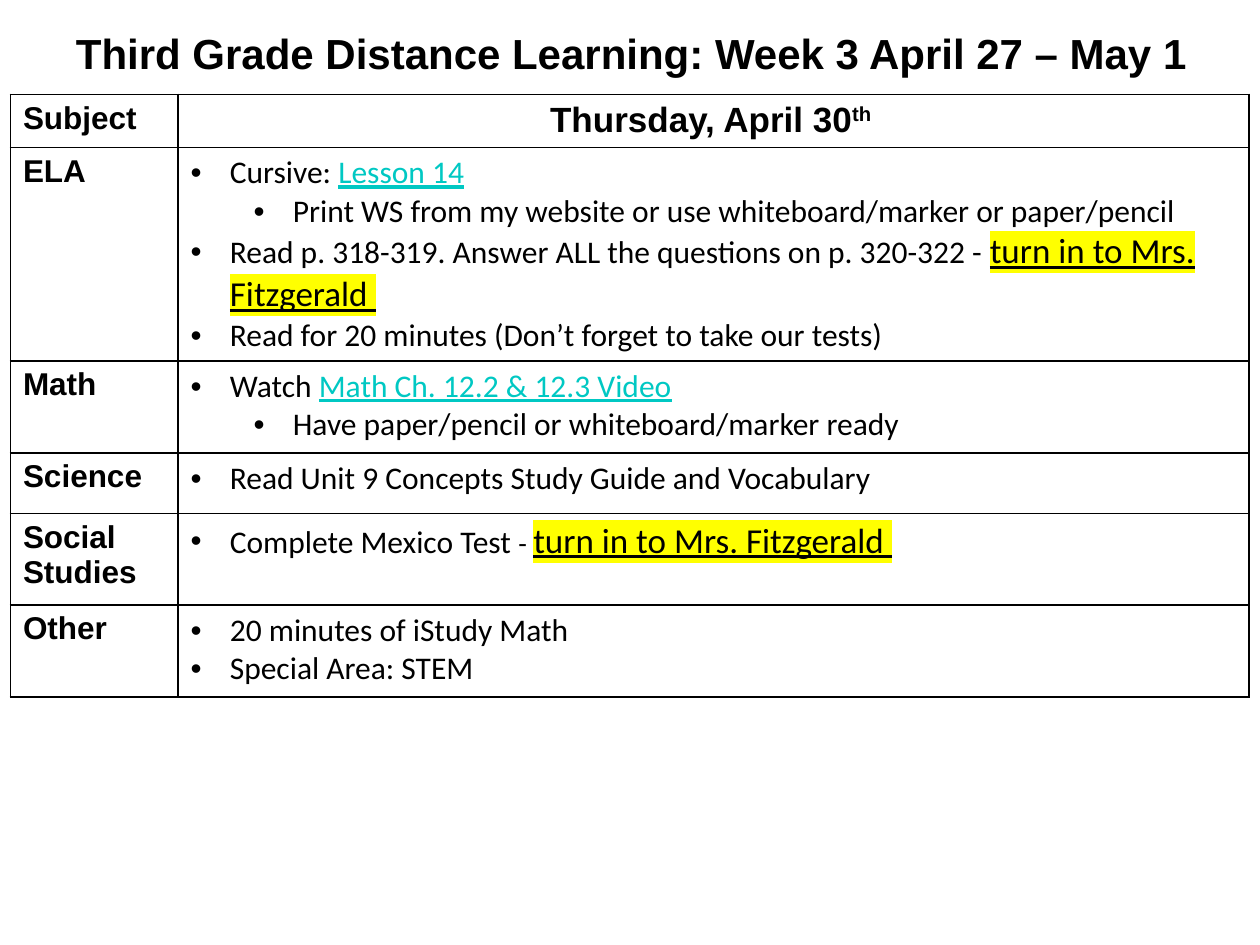
from dataclasses import dataclass

from lxml import etree
from pptx import Presentation
from pptx.dml.color import RGBColor
from pptx.enum import text
from pptx.oxml.ns import qn
from pptx.util import Cm, Pt


@dataclass(frozen=True)
class Theme:
    ink: str = "000000"
    paper: str = "FFFFFF"
    link: str = "00C8C3"
    mark: str = "FFFF00"
    head: str = "Arial"
    body: str = "Calibri"
    title: int = 24
    large: int = 20
    base: int = 18
    small: int = 16
    rule: int = 1


@dataclass(frozen=True)
class Span:
    words: str
    size: int = Theme.base
    font: str = Theme.body
    color: str = Theme.ink
    bold: bool = False
    line: bool = False
    mark: str = ""
    rise: int = 0


@dataclass(frozen=True)
class Item:
    spans: tuple[Span, ...]
    level: int = 0


@dataclass(frozen=True)
class Row:
    subject: str
    height: float
    items: tuple[Item, ...]


def label(words: str, size: int = Theme.base, rise: int = 0) -> Span:
    return Span(words, size, Theme.head, bold=True, rise=rise)


def link(words: str) -> Span:
    return Span(words, color=Theme.link, line=True)


def item(*spans: Span | str, level: int = 0) -> Item:
    return Item(tuple(Span(s) if isinstance(s, str) else s for s in spans), level)


TURN = Span("turn in to Mrs. Fitzgerald ", Theme.large, line=True, mark=Theme.mark)
WIDTHS = (3.38, 21.59)
HEAD = 1.07
ROWS = (
    Row("ELA", 2.97, (
        item("Cursive: ", link("Lesson 14")),
        item("Print WS from my website or use whiteboard/marker or paper/pencil", level=1),
        item("Read p. 318-319. Answer ALL the questions on p. 320-322 - ", TURN),
        item("Read for 20 minutes (Don’t forget to take our tests)"),
    )),
    Row("Math", 1.85, (
        item("Watch ", link("Math Ch. 12.2 & 12.3 Video")),
        item("Have paper/pencil or whiteboard/marker ready", level=1),
    )),
    Row("Science", 1.22, (item("Read Unit 9 Concepts Study Guide and Vocabulary"),)),
    Row("Social Studies", 1.85, (
        item("Complete Mexico Test ", Span("- ", Theme.small), TURN),
    )),
    Row("Other", 1.85, (
        item("20 minutes of iStudy Math"),
        item("Special Area: STEM"),
    )),
)


def write(para, spans: tuple[Span, ...], center: bool = False) -> None:
    if center:
        para.alignment = text.PP_ALIGN.CENTER
    for span in spans:
        run = para.add_run()
        run.text = span.words
        font = run.font
        font.name, font.size = span.font, Pt(span.size)
        font.bold, font.underline = span.bold, span.line
        font.color.rgb = RGBColor.from_string(span.color)
        props = run._r.get_or_add_rPr()
        if span.rise:
            props.set("baseline", str(span.rise * 1000))
        if span.mark:
            mark = etree.Element(qn("a:highlight"))
            etree.SubElement(mark, qn("a:srgbClr"), val=span.mark)
            props.find(qn("a:solidFill")).addnext(mark)


def bullet(para, level: int) -> None:
    para.level = level
    props = para._p.get_or_add_pPr()
    hang = Cm(0.79)
    props.set("marL", str(hang + level * Cm(1.27)))
    props.set("indent", str(-hang))
    etree.SubElement(props, qn("a:buFont"), typeface=Theme.head)
    etree.SubElement(props, qn("a:buChar"), char="•")


def frame(cell) -> None:
    """Give a cell its plain fill and a thin rule on each side."""
    cell.fill.solid()
    cell.fill.fore_color.rgb = RGBColor.from_string(Theme.paper)
    props = cell._tc.get_or_add_tcPr()
    for spot, side in enumerate("LRTB"):
        edge = etree.Element(qn(f"a:ln{side}"), w=str(Pt(Theme.rule)))
        fill = etree.SubElement(edge, qn("a:solidFill"))
        etree.SubElement(fill, qn("a:srgbClr"), val=Theme.ink)
        props.insert(spot, edge)


def title(slide) -> None:
    box = slide.shapes.add_textbox(Cm(0.03), Cm(0.43), Cm(25.4), Cm(1.27))
    box.text_frame.word_wrap = True
    words = "Third Grade Distance Learning: Week 3 April 27 – May 1"
    write(box.text_frame.paragraphs[0], (label(words, Theme.title),), center=True)


def plan(slide) -> None:
    """Draw the table of the day's work, one row per subject."""
    heights = (HEAD, *(row.height for row in ROWS))
    grid = slide.shapes.add_table(len(heights), len(WIDTHS), Cm(0.21), Cm(1.9),
                                  Cm(sum(WIDTHS)), Cm(sum(heights))).table
    grid.first_row = grid.horz_banding = False
    for col, width in zip(grid.columns, WIDTHS):
        col.width = Cm(width)
    for line, height in zip(grid.rows, heights):
        line.height = Cm(height)
    for cell in grid.iter_cells():
        frame(cell)

    for num, name in enumerate(("Subject", *(row.subject for row in ROWS))):
        write(grid.cell(num, 0).text_frame.paragraphs[0], (label(name),))
    day = (label("Thursday, April 30", Theme.large), label("th ", Theme.large, rise=30))
    write(grid.cell(0, 1).text_frame.paragraphs[0], day, center=True)
    for num, row in enumerate(ROWS, 1):
        body = grid.cell(num, 1).text_frame
        for spot, task in enumerate(row.items):
            para = body.add_paragraph() if spot else body.paragraphs[0]
            bullet(para, task.level)
            write(para, task.spans)


def main() -> None:
    deck = Presentation()
    deck.slide_width, deck.slide_height = Cm(25.4), Cm(19.05)
    slide = deck.slides.add_slide(deck.slide_layouts[6])
    plan(slide)
    title(slide)
    deck.save("out.pptx")


if __name__ == "__main__":
    main()
